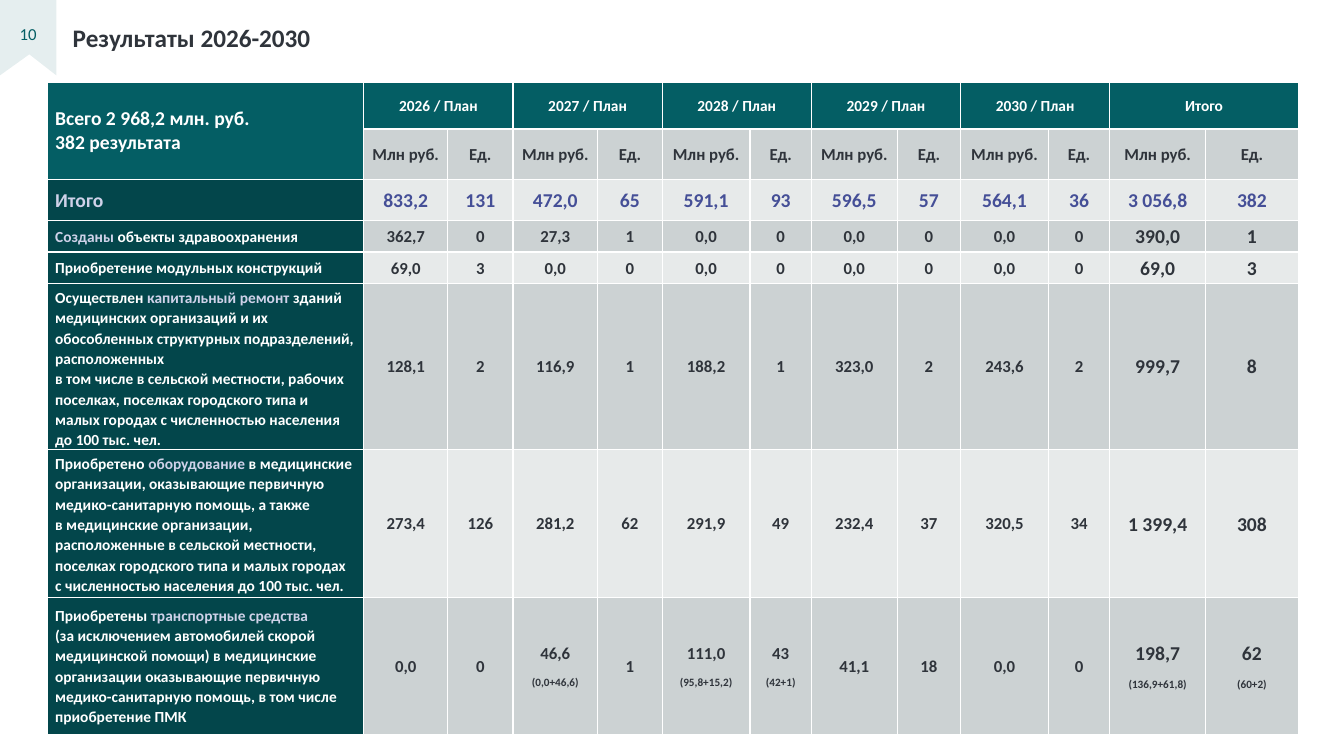
from dataclasses import dataclass
from typing import Any

from lxml import etree
from pptx import Presentation
from pptx.dml.color import RGBColor
from pptx.enum.text import MSO_ANCHOR, PP_ALIGN
from pptx.oxml.ns import qn
from pptx.util import Cm, Pt

MIDDLE = MSO_ANCHOR.MIDDLE
LEFT, CENTER = PP_ALIGN.LEFT, PP_ALIGN.CENTER


@dataclass(frozen=True)
class Theme:
    font: str = "Calibri"
    teal: str = "045E64"
    deep_teal: str = "03464B"
    white: str = "FFFFFF"
    ink: str = "2F343B"
    lilac: str = "CFD2E9"
    indigo: str = "454F97"
    bands: tuple[str, str] = ("CCD2D3", "E7EAEA")
    title: float = 18
    large: float = 14
    body: float = 12
    label: float = 11
    label_small: float = 10.5
    note: float = 8


THEME = Theme()


@dataclass(frozen=True)
class Piece:
    """A stretch of text with one look; a newline is a line break."""
    text: str
    size: float = THEME.label
    color: str = THEME.white
    bold: bool = True


@dataclass(frozen=True)
class ResultRow:
    label: tuple[Piece, ...]
    values: str


@dataclass(frozen=True)
class CellStyle:
    fill: str
    margins: tuple[float, float, float, float]  # left, top, right, bottom
    align: PP_ALIGN = CENTER
    spaced: bool = True


NARROW = (0.1, 0, 0.1, 0)
TIGHT = (0.03, 0.03, 0.03, 0)
WIDE = (0.2, 0, 0.2, 0)
LABEL = (0.2, 0.1, 0.2, 0.1)
SPACING = {"line_spacing": 1.07, "space_after": Pt(8)}

PERIODS = [f"{year} / План" for year in range(2026, 2031)] + ["Итого"]
UNITS = ("Млн руб.", "Ед.")
TOTALS = "833,2;131;472,0;65;591,1;93;596,5;57;564,1;36;3 056,8;382"

RESULTS = [
    ResultRow((Piece("Созданы", color=THEME.lilac), Piece(" объекты здравоохранения")),
              "362,7;0;27,3;1;0,0;0;0,0;0;0,0;0;390,0;1"),
    ResultRow((Piece("Приобретение модульных конструкций"),),
              "69,0;3;0,0;0;0,0;0;0,0;0;0,0;0;69,0;3"),
    ResultRow((Piece("Осуществлен "), Piece("капитальный ремонт ", color=THEME.lilac),
               Piece("зданий медицинских организаций и их обособленных структурных "
                     "подразделений, расположенных \nв том числе в сельской местности, "
                     "рабочих поселках, поселках городского типа и малых городах "
                     "с численностью населения до 100 тыс. чел.")),
              "128,1;2;116,9;1;188,2;1;323,0;2;243,6;2;999,7;8"),
    ResultRow((Piece("Приобретено "), Piece("оборудование", color=THEME.lilac),
               Piece(" в медицинские организации, оказывающие первичную "
                     "медико-санитарную помощь, а также \nв медицинские организации, "
                     "расположенные в сельской местности, поселках городского типа "
                     "и малых городах с численностью населения до 100 тыс. чел.")),
              "273,4;126;281,2;62;291,9;49;232,4;37;320,5;34;1 399,4;308"),
    ResultRow((Piece("Приобретены "), Piece("транспортные средства \n", color=THEME.lilac),
               Piece("(за исключением автомобилей скорой медицинской "),
               Piece("помощи", THEME.label_small),
               Piece(") в медицинские организации оказывающие первичную "
                     "медико-санитарную помощь, в том числе приобретение ПМК")),
              "0,0;0;46,6\n(0,0+46,6);1;111,0\n(95,8+15,2);43\n(42+1);"
              "41,1;18;0,0;0;198,7\n(136,9+61,8);62\n(60+2)"),
]

COLUMN_WIDTHS = [7.98, 2.11, 1.65, 2.13, 1.63, 2.21, 1.55, 2.16, 1.6, 2.21, 1.55, 2.41, 2.34]
ROW_HEIGHTS = [1.17, 1.27, 1.04, 0.79, 0.79, 4.04, 3.73, 3.45]


def apply(target: Any, values: dict[str, Any]) -> None:
    for name, value in values.items():
        setattr(target, name, value)


def set_margins(target: Any, margins: tuple[float, ...]) -> None:
    sides = ("margin_left", "margin_top", "margin_right", "margin_bottom")
    apply(target, {side: Cm(size) for side, size in zip(sides, margins)})


def write(frame: Any, paragraphs: list[tuple[Piece, ...]], form: dict[str, Any]) -> None:
    frame.word_wrap = True
    for index, pieces in enumerate(paragraphs):
        paragraph = frame.add_paragraph() if index else frame.paragraphs[0]
        apply(paragraph, form)
        for piece in pieces:
            for line_index, line in enumerate(piece.text.split("\n")):
                if line_index:
                    paragraph.add_line_break()
                if line:
                    run = paragraph.add_run()
                    run.text = line
                    apply(run.font, {"name": THEME.font, "size": Pt(piece.size),
                                     "bold": piece.bold})
                    run.font.color.rgb = RGBColor.from_string(piece.color)


def style_cell(cell: Any, fill: str) -> None:
    cell.fill.solid()
    cell.fill.fore_color.rgb = RGBColor.from_string(fill)
    properties = cell._tc.get_or_add_tcPr()
    for position, side in enumerate(("a:lnL", "a:lnR", "a:lnT", "a:lnB")):
        border = etree.Element(qn(side), w=str(Pt(1)))
        solid = etree.SubElement(border, qn("a:solidFill"))
        etree.SubElement(solid, qn("a:srgbClr"), val=THEME.white)
        properties.insert(position, border)


def fill_cell(cell: Any, paragraphs: list[tuple[Piece, ...]], style: CellStyle) -> None:
    style_cell(cell, style.fill)
    cell.vertical_anchor = MIDDLE
    set_margins(cell, style.margins)
    form = {"alignment": style.align} | (SPACING if style.spaced else {})
    write(cell.text_frame, paragraphs, form)


def draw_page_marker(slide: Any) -> None:
    builder = slide.shapes.build_freeform(0, 0)
    outline = [(0, 1.9), (0.74, 1.37), (1.42, 1.9), (1.42, 0)]
    builder.add_line_segments([(Cm(x), Cm(y)) for x, y in outline], close=True)
    marker = builder.convert_to_shape()
    marker.shadow.inherit = False
    marker.line.fill.background()
    marker.fill.solid()
    marker.fill.fore_color.rgb = RGBColor.from_string(THEME.teal)
    color = marker._element.spPr.find(".//" + qn("a:srgbClr"))
    etree.SubElement(color, qn("a:alpha"), val="10000")
    set_margins(marker.text_frame, (0.25, 0.2, 0.25, 0.41))
    marker.text_frame.vertical_anchor = MIDDLE
    write(marker.text_frame, [(Piece("10", THEME.body, THEME.teal, False),)],
          {"alignment": CENTER})


def draw_title(slide: Any) -> None:
    title = slide.shapes.add_textbox(Cm(1.83), Cm(0.38), Cm(26.19), Cm(1.24)).text_frame
    set_margins(title, (0, 0, 0, 0))
    title.vertical_anchor = MIDDLE
    write(title, [(Piece("Результаты 2026-2030", THEME.title, THEME.ink),)],
          {"alignment": LEFT, "line_spacing": 0.9})


def draw_results(slide: Any) -> None:
    table = slide.shapes.add_table(len(ROW_HEIGHTS), len(COLUMN_WIDTHS), Cm(1.19), Cm(2.08),
                                   Cm(sum(COLUMN_WIDTHS)), Cm(sum(ROW_HEIGHTS))).table
    apply(table, {"first_row": False, "horz_banding": False})
    for column, width in zip(table.columns, COLUMN_WIDTHS):
        column.width = Cm(width)
    for row, height in zip(table.rows, ROW_HEIGHTS):
        row.height = Cm(height)

    # Header: summary, periods and units
    table.cell(0, 0).merge(table.cell(1, 0))
    style_cell(table.cell(1, 0), THEME.teal)
    summary = [(Piece(line, THEME.large),)
               for line in ("Всего 2 968,2 млн. руб.", "382 результата")]
    fill_cell(table.cell(0, 0), summary, CellStyle(THEME.teal, WIDE, LEFT, False))
    for index, period in enumerate(PERIODS):
        first = 1 + 2 * index
        table.cell(0, first).merge(table.cell(0, first + 1))
        style_cell(table.cell(0, first + 1), THEME.teal)
        fill_cell(table.cell(0, first), [(Piece(period),)], CellStyle(THEME.teal, NARROW))
        for offset, unit in enumerate(UNITS):
            fill_cell(table.cell(1, first + offset), [(Piece(unit, THEME.body, THEME.ink),)],
                      CellStyle(THEME.bands[0], NARROW))

    # Totals
    fill_cell(table.cell(2, 0), [(Piece("Итого", THEME.large, THEME.lilac),)],
              CellStyle(THEME.deep_teal, WIDE, LEFT))
    for column, total in enumerate(TOTALS.split(";"), 1):
        fill_cell(table.cell(2, column), [(Piece(total, THEME.large, THEME.indigo),)],
                  CellStyle(THEME.bands[1], TIGHT, spaced=False))

    # Results in alternating bands, with larger figures in the last two columns
    for row, result in enumerate(RESULTS, 3):
        fill_cell(table.cell(row, 0), [result.label], CellStyle(THEME.deep_teal, LABEL, LEFT))
        band = CellStyle(THEME.bands[(row - 3) % 2], NARROW)
        for column, value in enumerate(result.values.split(";"), 1):
            size = THEME.large if column > 10 else THEME.body
            figures = [(Piece(line, THEME.note if index else size, THEME.ink),)
                       for index, line in enumerate(value.split("\n"))]
            fill_cell(table.cell(row, column), figures, band)


def main() -> None:
    deck = Presentation()
    apply(deck, {"slide_width": Cm(33.87), "slide_height": Cm(19.05)})
    slide = deck.slides.add_slide(deck.slide_layouts[6])
    draw_page_marker(slide)
    draw_title(slide)
    draw_results(slide)
    deck.save("out.pptx")


if __name__ == "__main__":
    main()
